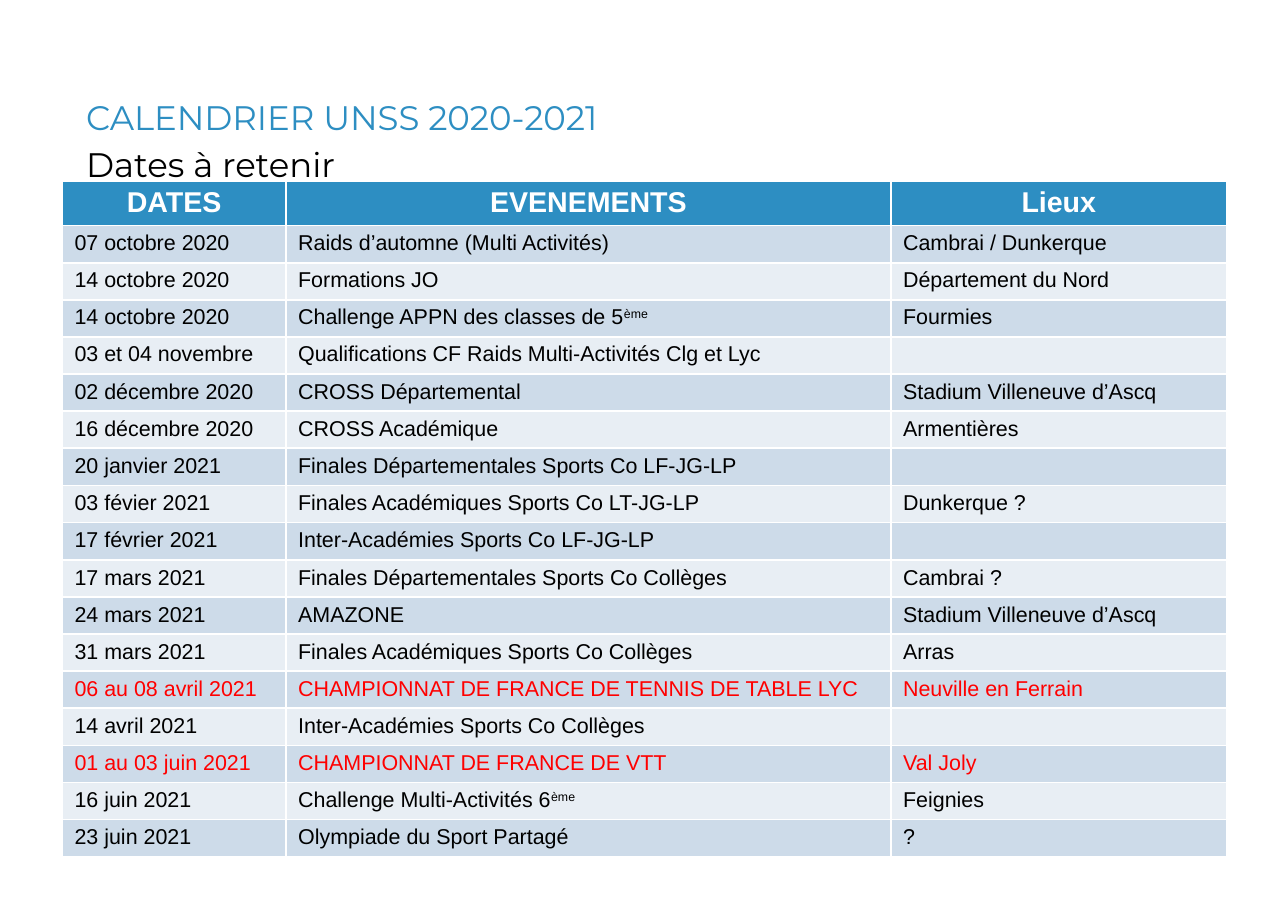
from lxml import etree
from pptx import Presentation
from pptx import util as u
from pptx.dml import color
from pptx.enum import text
from pptx.oxml import ns

BLUE, BLACK, WHITE, RED = "2D8EC2", "000000", "FFFFFF", "FF0000"
BANDS = ["CDDBE9", "E8EEF4"]
HEADS = ["DATES", "EVENEMENTS", "Lieux"]
# A caret marks the start of a superscript
EVENTS = [
    ("07 octobre 2020", "Raids d’automne (Multi Activités)", "Cambrai / Dunkerque"),
    ("14 octobre 2020", "Formations JO", "Département du Nord"),
    ("14 octobre 2020", "Challenge APPN des classes de 5^ème", "Fourmies"),
    ("03 et 04 novembre", "Qualifications CF Raids Multi-Activités Clg et Lyc", ""),
    ("02 décembre 2020", "CROSS Départemental", "Stadium Villeneuve d’Ascq"),
    ("16 décembre 2020", "CROSS Académique", "Armentières"),
    ("20 janvier 2021", "Finales Départementales Sports Co LF-JG-LP", ""),
    ("03 févier 2021", "Finales Académiques Sports Co LT-JG-LP", "Dunkerque ?"),
    ("17 février 2021", "Inter-Académies Sports Co LF-JG-LP", ""),
    ("17 mars 2021", "Finales Départementales Sports Co Collèges", "Cambrai ?"),
    ("24 mars 2021", "AMAZONE", "Stadium Villeneuve d’Ascq"),
    ("31 mars 2021", "Finales Académiques Sports Co Collèges", "Arras"),
    ("06 au 08 avril 2021", "CHAMPIONNAT DE FRANCE DE TENNIS DE TABLE LYC", "Neuville en Ferrain"),
    ("14 avril 2021", "Inter-Académies Sports Co Collèges", ""),
    ("01 au 03 juin 2021", "CHAMPIONNAT DE FRANCE DE VTT", "Val Joly"),
    ("16 juin 2021", "Challenge Multi-Activités 6^ème", "Feignies"),
    ("23 juin 2021", "Olympiade du Sport Partagé", "?"),
]


def rgb(code):
    return color.RGBColor.from_string(code)


def add_run(para, words, size, hue, face="Arial", bold=False):
    run = para.add_run()
    run.text = words
    font = run.font
    font.size, font.name, font.bold = u.Pt(size), face, bold
    font.color.rgb = rgb(hue)
    return run


deck = Presentation()
deck.slide_width, deck.slide_height = u.Cm(25.4), u.Cm(17.96)
slide = deck.slides.add_slide(deck.slide_layouts[1])

# Title and subtitle
title, body = slide.shapes.title, slide.placeholders[1]
for box, words, top, high, hue in [
    (title, "CALENDRIER UNSS 2020-2021", 1.9, 0.9, BLUE),
    (body, "Dates à retenir", 2.83, 1.07, BLACK),
]:
    box.left, box.top = u.Cm(1.7), u.Cm(top)
    box.width, box.height = u.Cm(22), u.Cm(high)
    frame = box.text_frame
    frame.auto_size = text.MSO_AUTO_SIZE.NONE
    frame.vertical_anchor = text.MSO_ANCHOR.TOP
    frame.margin_left = frame.margin_right = 0
    frame.margin_top = frame.margin_bottom = 0
    para = frame.paragraphs[0]
    para.alignment = text.PP_ALIGN.LEFT
    para.space_before = u.Pt(0)
    add_run(para, words, 19, hue, "Montserrat")

# The subtitle carries no bullet
props = body.text_frame.paragraphs[0]._p.get_or_add_pPr()
props.set("marL", "0")
props.set("indent", "0")
etree.SubElement(props, ns.qn("a:buNone"))

# Table grid
count = len(EVENTS)
table = slide.shapes.add_table(
    count + 1, 3, u.Cm(1.23), u.Cm(3.58), u.Cm(22.96), u.Cm(0.87 + 0.73 * count)
).table
for col, wide in zip(table.columns, [4.41, 11.93, 6.62]):
    col.width = u.Cm(wide)
for i, row in enumerate(table.rows):
    row.height = u.Cm(0.73 if i else 0.87)

# Table cells
for i, line in enumerate([HEADS] + EVENTS):
    head = i == 0
    size = 16 if head else 12
    fill = BLUE if head else BANDS[(i - 1) % 2]
    hue = WHITE if head else RED if "CHAMPIONNAT" in line[1] else BLACK
    for j, words in enumerate(line):
        cell = table.cell(i, j)
        cell.fill.solid()
        cell.fill.fore_color.rgb = rgb(fill)
        cell.margin_left = cell.margin_right = u.Cm(0.24)
        cell.margin_top = cell.margin_bottom = u.Cm(0.11)
        para = cell.text_frame.paragraphs[0]
        if head:
            para.alignment = text.PP_ALIGN.CENTER
        if not words:
            etree.SubElement(para._p, ns.qn("a:endParaRPr"), sz="1200")
            continue
        base, _, sup = words.partition("^")
        add_run(para, base, size, hue, bold=head)
        if sup:
            run = add_run(para, sup, size, hue)
            run.font._element.set("baseline", "30000")

deck.save("out.pptx")
